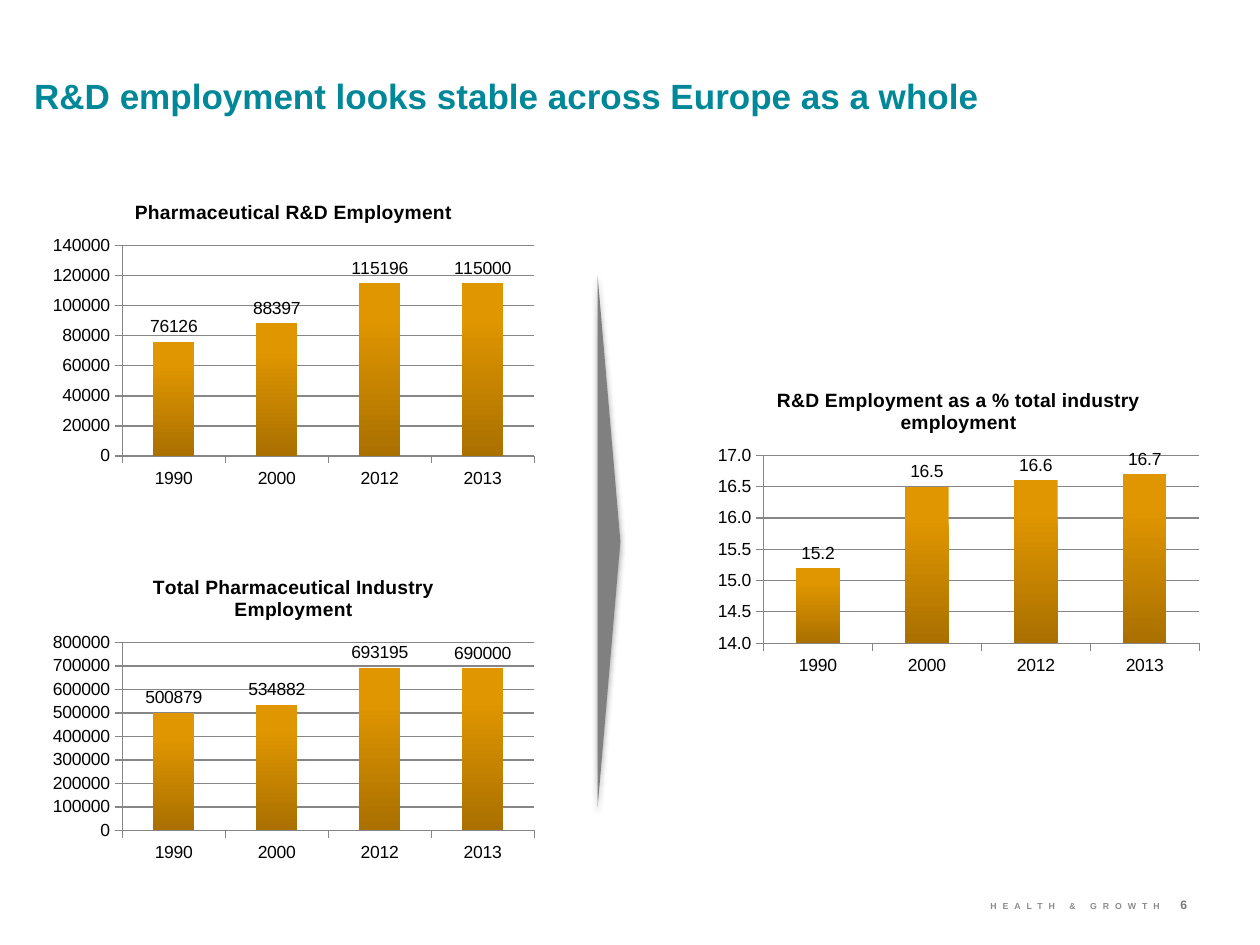
from lxml import etree
from pptx import Presentation
from pptx.chart.data import CategoryChartData
from pptx.dml.color import RGBColor
from pptx.enum.chart import XL_CHART_TYPE as CT, XL_LABEL_POSITION as LP, XL_TICK_MARK as TM
from pptx.enum.shapes import MSO_SHAPE as MS
from pptx.enum.text import MSO_ANCHOR as MA, PP_ALIGN as PA
from pptx.util import Pt


def rgb(value):
    return RGBColor.from_string(value)


def set_font(font, size, color, bold=False):
    for name, value in dict(name="Arial", size=Pt(size), bold=bold).items():
        setattr(font, name, value)
    font.color.rgb = rgb(color)


prs = Presentation()
prs.slide_width, prs.slide_height = Pt(720), Pt(540)
s = prs.slides.add_slide(prs.slide_layouts[6])

# Title, footer and page number
texts = [
    ("R&D employment looks stable across Europe as a whole",
     (19.5, 42.5, 672, 24.5), 20, "008898", PA.LEFT, 0),
    ("HEALTH & GROWTH", (442, 515, 221, 11.5), 5, "8C8C8C", PA.RIGHT, 340),
    ("6", (674.5, 512.5, 31, 12), 7, "77787B", PA.LEFT, 0),
]
for text, box, size, color, align, spacing in texts:
    tf = s.shapes.add_textbox(*map(Pt, box)).text_frame
    fmt = dict(margin_left=0, margin_right=0, margin_top=0, margin_bottom=0,
               word_wrap=True, vertical_anchor=MA.TOP)
    for name, value in fmt.items():
        setattr(tf, name, value)
    p = tf.paragraphs[0]
    p.alignment = align
    r = p.add_run()
    r.text = text
    set_font(r.font, size, color, True)
    if spacing:
        r.font._element.set("spc", str(spacing))

# Column charts: title, left, top, values, number format, axis (min, max, step)
years = ["1990", "2000", "2012", "2013"]
charts = [
    ("Pharmaceutical R&D Employment", 24.5, 104.5,
     (76126, 88397, 115196, 115000), "General", (0, 140000, 20000)),
    ("Total Pharmaceutical Industry Employment", 24.5, 318.5,
     (500879, 534882, 693195, 690000), "General", (0, 800000, 100000)),
    ("R&D Employment as a % total industry employment", 404.5, 211.5,
     (15.2, 16.5, 16.6, 16.7), "0.0", (14, 17, 0.5)),
]
for title, left, top, values, num_fmt, (low, high, step) in charts:
    data = CategoryChartData(number_format=num_fmt)
    data.categories = years
    data.add_series("Series 1", values)
    chart = s.shapes.add_chart(CT.COLUMN_CLUSTERED, Pt(left), Pt(top),
                               Pt(286.5), Pt(178), data).chart
    set_font(chart.font, 10, "000000")
    chart.has_legend = False
    chart.has_title = True
    tf = chart.chart_title.text_frame
    tf.text = title
    set_font(tf.paragraphs[0].runs[0].font, 11, "000000", True)
    chart.chart_title.include_in_layout = False

    # Axes
    val = chart.value_axis
    fmt = dict(minimum_scale=low, maximum_scale=high, major_unit=step,
               has_major_gridlines=True)
    for name, value in fmt.items():
        setattr(val, name, value)
    val.tick_labels.number_format = num_fmt
    val.tick_labels.number_format_is_linked = False
    for axis in (chart.category_axis, val):
        axis.major_tick_mark = TM.OUTSIDE
        axis.minor_tick_mark = TM.NONE
    for part in (chart.category_axis, val, val.major_gridlines):
        part.format.line.color.rgb = rgb("868686")
        part.format.line.width = Pt(0.75)

    # Columns and their labels
    plot = chart.plots[0]
    plot.gap_width = 150
    plot.vary_by_categories = False
    fill = plot.series[0].format.fill
    fill.gradient()
    fill.gradient_angle = 270
    for stop, position, color in zip(fill.gradient_stops, (0.2, 1), ("E09600", "AA7000")):
        stop.position = position
        stop.color.rgb = rgb(color)
    plot.has_data_labels = True
    labels = plot.data_labels
    fmt = dict(show_value=True, position=LP.OUTSIDE_END,
               number_format=num_fmt, number_format_is_linked=False)
    for name, value in fmt.items():
        setattr(labels, name, value)
    set_font(labels.font, 10, "000000")

# Wedge pointing from the two left charts to the right one
sp = s.shapes.add_shape(MS.ISOSCELES_TRIANGLE, Pt(196), Pt(303), Pt(304), Pt(13))
sp.rotation = 90
sp.fill.solid()
sp.fill.fore_color.rgb = rgb("808080")
sp.line.fill.background()
sp.shadow.inherit = False
ns = "http://schemas.openxmlformats.org/drawingml/2006/main"
effects = sp._element.spPr.find(f"{{{ns}}}effectLst")
shadow = etree.SubElement(effects, f"{{{ns}}}outerShdw", blurRad=str(Pt(3.1)),
                          dist=str(Pt(1.8)), dir="5400000", rotWithShape="0")
black = etree.SubElement(shadow, f"{{{ns}}}srgbClr", val="000000")
etree.SubElement(black, f"{{{ns}}}alpha", val="35000")

prs.save("out.pptx")
